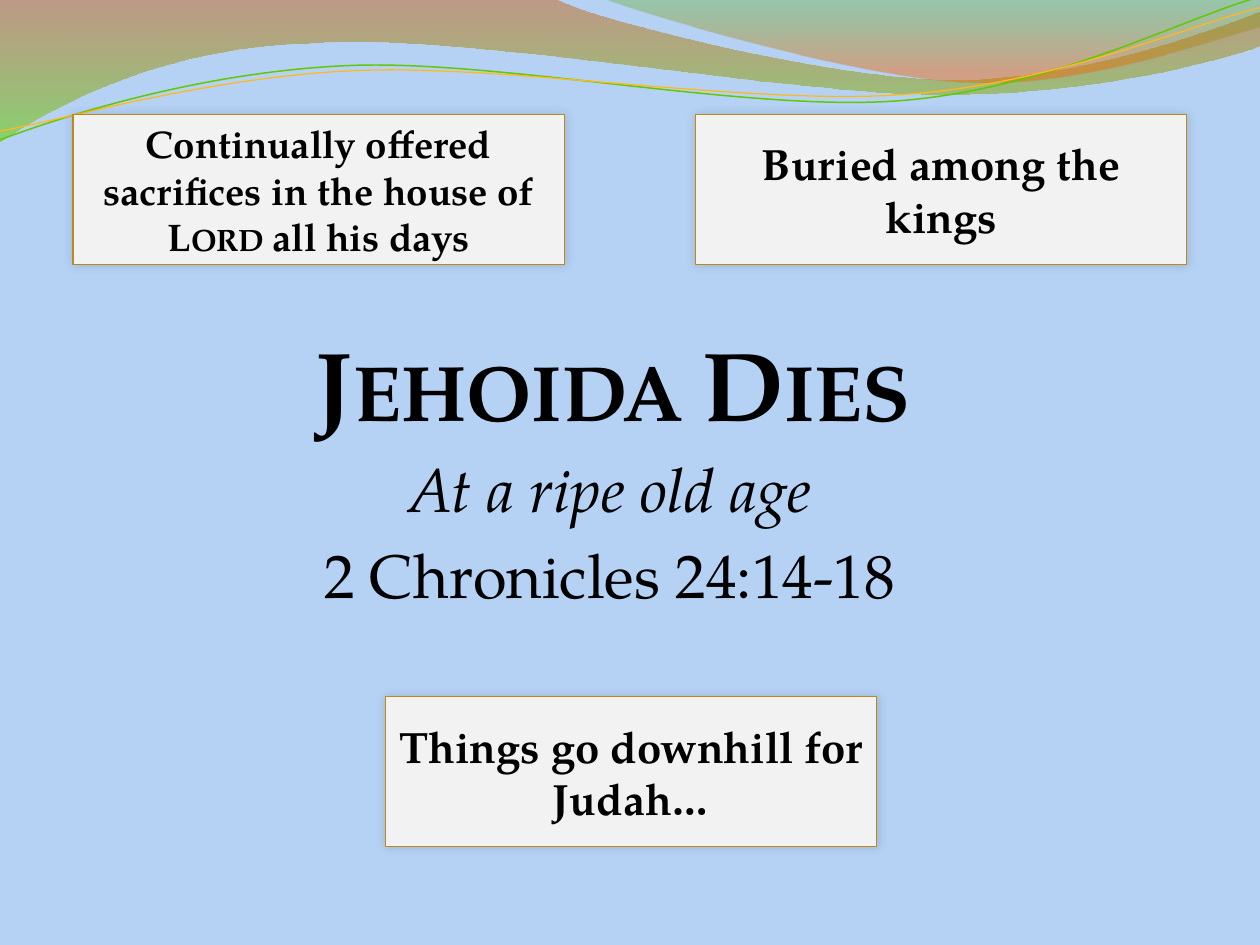
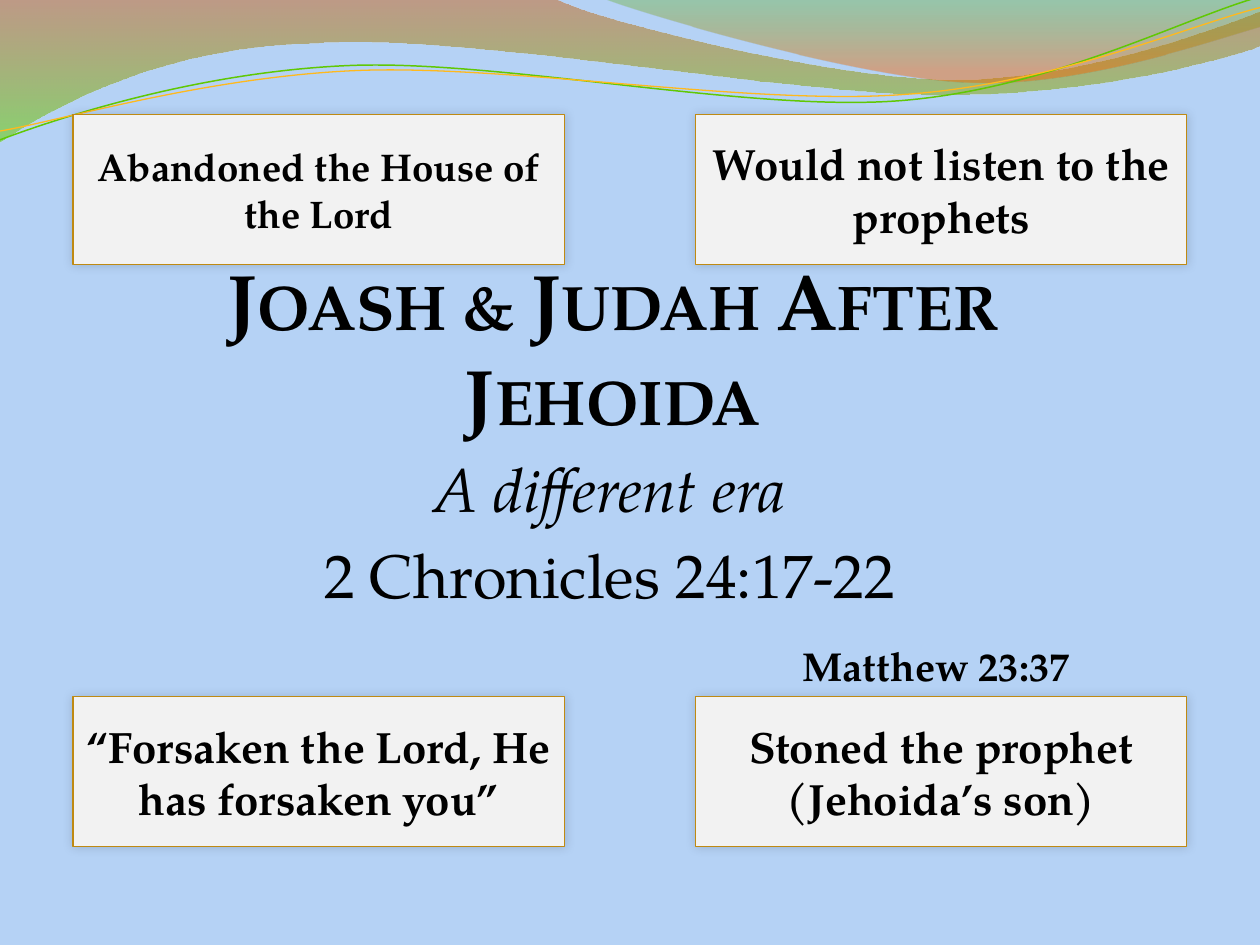
import math
from dataclasses import dataclass
from typing import Any, NamedTuple

import lxml.etree
import pptx
import pptx.dml.color
import pptx.enum.shapes
import pptx.enum.text
import pptx.oxml.ns
import pptx.util

PX = 9144  # one px is a hundredth of an inch
FONT = "TeX Gyre Pagella"
COLORS = {
    "sky": "B5D2F5", "text": "000000", "card": "F2F2F2", "card_edge": "BF8A13",
    "rust": "C95600", "lime": "63D200", "leaf": "50AB00", "orange": "F06700",
    "green_line": "60C804", "gold_line": "FFB91D",
}
LINE_TILT = 2.7  # degrees, counterclockwise
FIRST_WAVE_ID = 101

LEFT, RIGHT, MIDDLE = 58, 552, 306
TOP, BOTTOM = 91, 553
CARD_WIDTH, CARD_HEIGHT = 390, 119
HEADING_WIDTH = 859


class Stop(NamedTuple):
    position: float
    color: str
    opacity: int


class Span(NamedTuple):
    text: str
    size: int
    bold: bool = False
    italic: bool = False
    small_caps: bool = False


@dataclass(frozen=True)
class Wave:
    """Steps of two numbers are straight lines, steps of six are Bezier curves."""
    start: tuple[int, int]
    steps: tuple[tuple[int, ...], ...]
    stops: tuple[Stop, ...] = ()
    line: str = ""
    weight: float = 0
    pivot: tuple[float, float] = (0, 0)


@dataclass(frozen=True)
class Card:
    left: int
    top: int
    spans: tuple[Span, ...]


@dataclass(frozen=True)
class Topic:
    title: Span
    subtitle: str
    passage: str
    cards: tuple[Card, ...]
    reference: str = ""


WAVES = (
    Wave((0, 0), ((440, -1), (476, 17, 664, 63, 758, 63), (853, 63, 958, 26, 1000, 9),
                  (1001, 36), (983, 44, 870, 76, 746, 75), (622, 75, 382, 28, 257, 34),
                  (129, 36, 46, 83, -1, 113), (0, 0)),
         stops=(Stop(0, "rust", 45), Stop(1, "lime", 55))),
    Wave((479, -1), ((509, 11, 682, 62, 769, 65), (856, 69, 961, 32, 1000, 21),
                     (1000, 0), (479, -1)),
         stops=(Stop(0, "leaf", 30), Stop(0.8, "orange", 45))),
    Wave((0, 111), ((48, 93, 158, 57, 277, 52), (395, 47, 593, 89, 713, 80),
                    (833, 71, 938, 15, 998, -2)),
         line="green_line", weight=0.85, pivot=(499, 57.5)),
    Wave((0, 104), ((47, 96, 164, 61, 283, 56), (403, 51, 597, 84, 717, 75),
                    (836, 67, 941, 21, 1000, 6)),
         line="gold_line", weight=0.75, pivot=(499.5, 59)),
)


def bold(text: str, size: int = 25, small_caps: bool = False) -> Span:
    return Span(text, size, bold=True, small_caps=small_caps)


TOPICS = (
    Topic(
        bold("Jehoida Dies", 56, small_caps=True), "At a ripe old age", "2 Chronicles 24:14-18",
        (Card(RIGHT, TOP, (bold("Buried among the kings"),)),
         Card(MIDDLE, BOTTOM, (bold("Things go downhill for Judah…"),)),
         Card(LEFT, TOP, (bold("Continually offered sacrifices in the house of ", 22),
                          bold("Lord ", 22, small_caps=True),
                          bold("all his days", 22)))),
    ),
    Topic(
        bold("Joash & Judah After Jehoida", 45, small_caps=True),
        "A different era", "2 Chronicles 24:17-22",
        (Card(RIGHT, TOP, (bold("Would not listen to the prophets"),)),
         Card(LEFT, BOTTOM, (bold("“Forsaken the Lord, He has forsaken you”"),)),
         Card(LEFT, TOP, (bold("Abandoned the House of the Lord", 22),)),
         Card(RIGHT, BOTTOM, (bold("Stoned the prophet (Jehoida’s son)"),))),
        reference="Matthew 23:37 ",
    ),
)


def color(name: str) -> pptx.dml.color.RGBColor:
    return pptx.dml.color.RGBColor.from_string(COLORS[name])


def emu(*lengths: float) -> list[int]:
    return [round(length * PX) for length in lengths]


def add_xml(parent: Any, tag: str, **attributes: str) -> Any:
    return lxml.etree.SubElement(parent, pptx.oxml.ns.qn(tag), attributes)


def level(point: tuple[float, float], pivot: tuple[float, float]) -> tuple[float, float]:
    """Take the tilt out of a point, since the shape's rotation puts it back."""
    angle = math.radians(LINE_TILT)
    dx, dy = point[0] - pivot[0], point[1] - pivot[1]
    return (pivot[0] + dx * math.cos(angle) - dy * math.sin(angle),
            pivot[1] + dx * math.sin(angle) + dy * math.cos(angle))


def bend(shape: Any, wave: Wave) -> None:
    """Join each three line segments that stand for a curve into a Bezier segment."""
    segments = iter(list(shape.element.iter(pptx.oxml.ns.qn("a:lnTo"))))
    for step in wave.steps:
        first = next(segments)
        if len(step) == 6:
            first.addprevious(curve := lxml.etree.Element(pptx.oxml.ns.qn("a:cubicBezTo")))
            for segment in (first, next(segments), next(segments)):
                curve.append(segment[0])
                segment.getparent().remove(segment)


def add_wave(page: Any, wave: Wave) -> Any:
    points = [wave.start]
    for step in wave.steps:
        points.extend(zip(step[::2], step[1::2]))
    if wave.line:
        points = [level(point, wave.pivot) for point in points]
    start, *others = [tuple(emu(*point)) for point in points]
    builder = page.shapes.build_freeform(*start)
    builder.add_line_segments(others, close=bool(wave.stops))
    shape = builder.convert_to_shape()
    bend(shape, wave)
    shape.shadow.inherit = False
    if wave.line:
        shape.rotation = 360 - LINE_TILT
        shape.fill.background()
        shape.line.color.rgb = color(wave.line)
        shape.line.width = pptx.util.Pt(wave.weight)
        return shape
    shape.line.fill.background()
    shape.fill.gradient()
    shape.fill.gradient_angle = 270
    for target, stop in zip(shape.fill.gradient_stops, wave.stops):
        target.position = stop.position
        target.color.rgb = color(stop.color)
    nodes = shape.element.spPr.iter(pptx.oxml.ns.qn("a:gs"))
    for node, stop in zip(nodes, wave.stops):
        add_xml(node[0], "a:alpha", val=str(stop.opacity * 1000))
    return shape


def write(para: Any, spans: tuple[Span, ...]) -> None:
    para.alignment = pptx.enum.text.PP_ALIGN.CENTER
    for span in spans:
        run = para.add_run()
        run.text = span.text
        run.font.name = FONT
        run.font.size = pptx.util.Pt(span.size)
        run.font.bold = span.bold
        run.font.italic = span.italic
        run.font.color.rgb = color("text")
        if span.small_caps:
            run.font._element.set("cap", "small")


def set_frame(box: Any, anchor: Any, insets: tuple[int, int, int, int] = (10, 5, 10, 5)) -> Any:
    frame = box.text_frame
    frame.word_wrap = True
    frame.auto_size = pptx.enum.text.MSO_AUTO_SIZE.NONE
    frame.vertical_anchor = anchor
    (frame.margin_left, frame.margin_top,
     frame.margin_right, frame.margin_bottom) = emu(*insets)
    return frame


def add_heading(page: Any, topic: Topic) -> None:
    """Fill the title and put the subtitle and passage under it."""
    anchors = pptx.enum.text.MSO_ANCHOR
    title = page.shapes.title
    title.left, title.top, title.width, title.height = emu(LEFT, 150, HEADING_WIDTH, 200)
    frame = set_frame(title, anchors.BOTTOM, (0, 0, 2, 0))
    write(frame.paragraphs[0], (topic.title,))

    box = page.shapes.add_textbox(*emu(LEFT, 353, HEADING_WIDTH, 192))
    frame = set_frame(box, anchors.TOP, (0, 5, 7, 5))
    lines = (Span(topic.subtitle, 35, italic=True), Span(topic.passage, 35))
    for para, line in zip((frame.paragraphs[0], frame.add_paragraph()), lines):
        para.space_before = pptx.util.Pt(7)
        write(para, (line,))


def add_card(page: Any, card: Card) -> None:
    box = page.shapes.add_shape(pptx.enum.shapes.MSO_SHAPE.RECTANGLE,
                                *emu(card.left, card.top, CARD_WIDTH, CARD_HEIGHT))
    box.fill.solid()
    box.fill.fore_color.rgb = color("card")
    box.line.color.rgb = color("card_edge")
    box.line.width = pptx.util.Pt(0.75)
    box.shadow.inherit = False
    effects = box.element.spPr.find(pptx.oxml.ns.qn("a:effectLst"))
    shadow = add_xml(effects, "a:outerShdw", blurRad=str(pptx.util.Pt(6)), dist="0",
                     dir="18900000", algn="ctr", rotWithShape="0")
    shade = add_xml(shadow, "a:srgbClr", val=COLORS["text"])
    add_xml(shade, "a:alpha", val="15000")
    frame = set_frame(box, pptx.enum.text.MSO_ANCHOR.MIDDLE)
    write(frame.paragraphs[0], card.spans)


def add_reference(page: Any, text: str) -> None:
    box = page.shapes.add_textbox(*emu(RIGHT, 504, CARD_WIDTH, 49))
    frame = set_frame(box, pptx.enum.text.MSO_ANCHOR.TOP)
    write(frame.paragraphs[0], (bold(text, 23),))


def add_topic(deck: Any, topic: Topic) -> None:
    page = deck.slides.add_slide(deck.slide_layouts.get_by_name("Title Only"))
    add_heading(page, topic)
    for card in topic.cards:
        add_card(page, card)
    if topic.reference:
        add_reference(page, topic.reference)


def dress_master(deck: Any) -> None:
    """Give every slide the sky and the waves."""
    master = deck.slide_master
    backdrop = master.background.fill
    backdrop.solid()
    backdrop.fore_color.rgb = color("sky")
    for number, wave in enumerate(WAVES, FIRST_WAVE_ID):
        shape = add_wave(deck.slides[0], wave)
        shape.element.nvSpPr.cNvPr.set("id", str(number))
        master.shapes.element.append(shape.element)


def main() -> None:
    deck = pptx.Presentation()
    deck.slide_width, deck.slide_height = emu(1000, 750)
    for topic in TOPICS:
        add_topic(deck, topic)
    dress_master(deck)
    deck.save("out.pptx")


if __name__ == "__main__":
    main()
